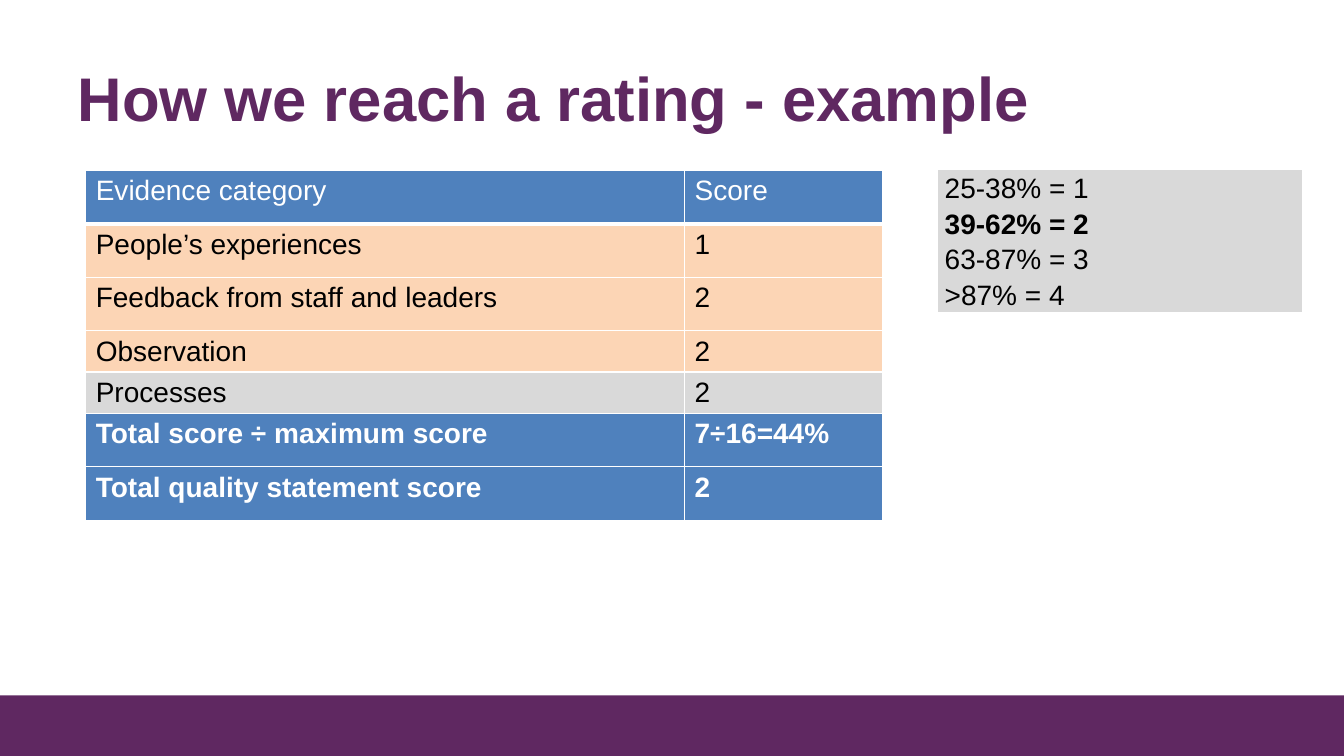
from lxml import etree
from pptx import Presentation
from pptx.dml.color import RGBColor
from pptx.enum.shapes import MSO_SHAPE
from pptx.enum.text import MSO_ANCHOR, PP_ALIGN
from pptx.oxml.ns import qn
from pptx.util import Inches, Pt

RECT = MSO_SHAPE.RECTANGLE
TOP = MSO_ANCHOR.TOP
MIDDLE = MSO_ANCHOR.MIDDLE
LEFT = PP_ALIGN.LEFT
PLAIN = "{2D5ABB26-0587-4C30-8999-92F81FD0307C}"
HUES = {
    "plum": "5F2861",
    "blue": "4F81BD",
    "peach": "FCD5B5",
    "gray": "D9D9D9",
    "white": "FFFFFF",
    "black": "000000",
}
SCORES = [
    ("Evidence category", "Score", "blue", 0.53),
    ("People’s experiences", "1", "peach", 0.53),
    ("Feedback from staff and leaders", "2", "peach", 0.53),
    ("Observation", "2", "peach", 0.41),
    ("Processes", "2", "gray", 0.41),
    ("Total score ÷ maximum score", "7÷16=44%", "blue", 0.53),
    ("Total quality statement score", "2", "blue", 0.53),
]
BANDS = ["25-38% = 1", "39-62% = 2", "63-87% = 3", ">87% = 4"]


def write(frame, text, size=20, hue="black", bold=False, space=1.0):
    frame.text = text
    para = frame.paragraphs[0]
    para.alignment = LEFT
    para.line_spacing = space
    font = para.runs[0].font
    font.name = "Arial"
    font.size = Pt(size)
    font.bold = bold
    font.color.rgb = RGBColor.from_string(HUES[hue])


def paint(fill, hue):
    fill.solid()
    fill.fore_color.rgb = RGBColor.from_string(HUES[hue])


def edge(cell, base):
    props = cell._tc.get_or_add_tcPr()
    for side, width in (("L", 1), ("R", 1), ("T", 1), ("B", base)):
        line = etree.SubElement(props, qn("a:ln" + side), w=str(Pt(width)))
        fill = etree.SubElement(line, qn("a:solidFill"))
        etree.SubElement(fill, qn("a:srgbClr"), val=HUES["white"])


class Deck:
    def __init__(self):
        self.show = Presentation()
        self.show.slide_width = Inches(13.33)
        self.show.slide_height = Inches(7.5)
        self.slide = self.show.slides.add_slide(self.show.slide_layouts[5])

    def title(self, text):
        box = self.slide.shapes.title
        box.left, box.top = Inches(0.67), Inches(0.48)
        box.width, box.height = Inches(12), Inches(1.45)
        frame = box.text_frame
        frame.vertical_anchor = TOP
        frame.margin_top = Inches(0.11)
        write(frame, text, size=44, hue="plum", bold=True)

    def bar(self, top, height, hue):
        shape = self.slide.shapes.add_shape(
            RECT, 0, Inches(top), self.show.slide_width, Inches(height))
        shape.shadow.inherit = False
        paint(shape.fill, hue)
        shape.line.fill.background()

    def table(self, left, top, cols, rows):
        frame = self.slide.shapes.add_table(
            len(rows), len(cols), Inches(left), Inches(top),
            Inches(sum(cols)), Inches(sum(rows)))
        next(frame.element.iter(qn("a:tableStyleId"))).text = PLAIN
        table = frame.table
        for col, width in zip(table.columns, cols):
            col.width = Inches(width)
        for row, height in zip(table.rows, rows):
            row.height = Inches(height)
        return table

    def scores(self):
        table = self.table(0.85, 1.69, [5.94, 1.96], [row[3] for row in SCORES])
        for r, (label, score, hue, _) in enumerate(SCORES):
            for c, text in enumerate((label, score)):
                cell = table.cell(r, c)
                edge(cell, 3 if r == 0 else 1)
                paint(cell.fill, hue)
                write(cell.text_frame, text, bold=r > 4,
                      hue="white" if hue == "blue" else "black")

    def bands(self):
        table = self.table(9.3, 1.69, [3.61], [0.35] * len(BANDS))
        for r, text in enumerate(BANDS):
            cell = table.cell(r, 0)
            cell.margin_left = cell.margin_right = Inches(0.07)
            cell.margin_top = cell.margin_bottom = Inches(0.01)
            cell.vertical_anchor = MIDDLE
            paint(cell.fill, "gray")
            write(cell.text_frame, text, bold=r == 1, space=1.07)


def main():
    deck = Deck()
    deck.bar(6.9, 0.6, "plum")
    deck.title("How we reach a rating - example")
    deck.scores()
    deck.bands()
    deck.show.save("out.pptx")


if __name__ == "__main__":
    main()
